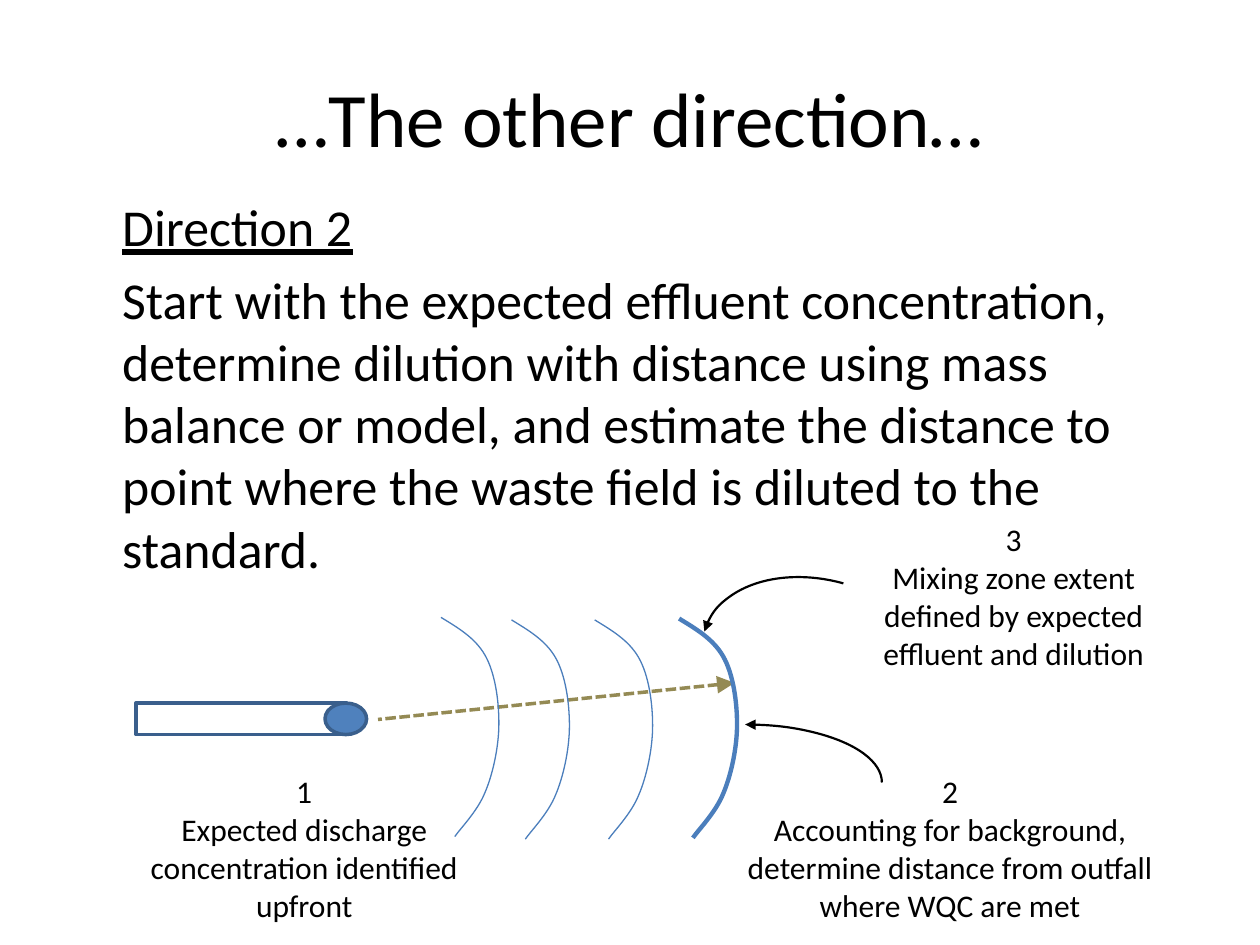
import pptx
import pptx.dml.color
import pptx.enum.dml
import pptx.enum.shapes
import pptx.enum.text
import pptx.oxml
import pptx.oxml.ns
import pptx.util

RGB = pptx.dml.color.RGBColor
SHAPE = pptx.enum.shapes.MSO_SHAPE
ALIGN = pptx.enum.text.PP_ALIGN
ANCHOR = pptx.enum.text.MSO_ANCHOR

BLACK = RGB(0x00, 0x00, 0x00)
BLUE = RGB(0x4F, 0x81, 0xBD)
NAVY = RGB(0x3A, 0x5F, 0x8C)
WAVE = RGB(0x4B, 0x7E, 0xBC)
OLIVE = RGB(0x94, 0x8A, 0x54)
FONT = "Calibri"
SCALE = 9144
BEND = (
    (13, 8), (27, 16), (35, 30),
    (43, 44), (46, 66), (46, 84),
    (46, 103), (41, 125), (35, 139),
    (29, 154), (15, 168), (11, 174),
)


def px(count):
    return pptx.util.Emu(count * SCALE)


def node(tag, **attrs):
    item = pptx.oxml.parse_xml(f'<a:{tag} {pptx.oxml.ns.nsdecls("a")}/>')
    for name, value in attrs.items():
        item.set(name, value)
    return item


class Painter:
    """Draws styled elements on the current slide, with lengths in px."""

    def __init__(self, deck):
        self.slide = deck.slides.add_slide(deck.slide_layouts[6])
        self.shapes = self.slide.shapes

    def text(self, box, lines, size, align=ALIGN.CENTER, anchor=ANCHOR.TOP, indent=0):
        frame = self.shapes.add_textbox(*map(px, box)).text_frame
        frame.word_wrap = True
        frame.vertical_anchor = anchor
        frame.margin_left = px(10 + indent)
        frame.text = "\n".join(lines)
        for par in frame.paragraphs:
            par.alignment = align
            par.font.name = FONT
            par.font.size = pptx.util.Pt(size)
            par.font.color.rgb = BLACK
        return frame

    def space(self, frame, share):
        for par in frame.paragraphs:
            gap = node("spcBef")
            gap.append(node("spcPct", val=str(share * 1000)))
            par._p.get_or_add_pPr().insert(0, gap)

    def stroke(self, line, color, width):
        line.color.rgb = color
        line.width = pptx.util.Pt(width)

    def point(self, line, size="med"):
        line._get_or_add_ln().append(node("headEnd", type="triangle", w=size, len=size))

    def shape(self, kind, box, color, width, fill=None):
        shape = self.shapes.add_shape(kind, *map(px, box))
        shape.shadow.inherit = False
        if fill is None:
            shape.fill.background()
        else:
            shape.fill.solid()
            shape.fill.fore_color.rgb = fill
        self.stroke(shape.line, color, width)
        return shape

    def arc(self, box, turn=0):
        arc = self.shape(SHAPE.ARC, box, BLACK, 1.25)
        arc.rotation = turn
        self.point(arc.line)

    def arrow(self, tip, base, color, width):
        kind = pptx.enum.shapes.MSO_CONNECTOR.STRAIGHT
        arrow = self.shapes.add_connector(kind, *map(px, tip + base))
        self.stroke(arrow.line, color, width)
        arrow.line.dash_style = pptx.enum.dml.MSO_LINE.SQUARE_DOT
        self.point(arrow.line, "lg")
        arrow._element.spPr.append(node("effectLst"))

    def wave(self, left, top, width):
        trace = self.shapes.build_freeform(px(left), px(top))
        trace.add_line_segments([(px(left + x), px(top + y)) for x, y in BEND], close=False)
        wave = trace.convert_to_shape()
        legs = list(wave._element.iter(pptx.oxml.ns.qn("a:lnTo")))
        for start in range(0, len(legs), 3):
            curve = node("cubicBezTo")
            legs[start].addprevious(curve)
            for leg in legs[start:start + 3]:
                curve.append(leg[0])
                leg.getparent().remove(leg)
        wave.shadow.inherit = False
        wave.fill.background()
        self.stroke(wave.line, WAVE, width)


def main():
    deck = pptx.Presentation()
    deck.slide_width, deck.slide_height = px(1000), px(750)
    pen = Painter(deck)

    pen.text((50, 30, 900, 125), ["…The other direction…"], 44, anchor=ANCHOR.MIDDLE)
    body = pen.text((50, 150, 900, 300), [
        "Direction 2",
        "Start with the expected effluent concentration, determine dilution with distance "
        "using mass balance or model, and estimate the distance to point where the waste "
        "field is diluted to the standard.",
    ], 29.6, ALIGN.LEFT, indent=37)
    pen.space(body, 20)
    body.paragraphs[0].font.underline = True

    pen.shape(SHAPE.RECTANGLE, (108, 558, 167, 25), NAVY, 2)
    pen.shape(SHAPE.OVAL, (258, 558, 33, 25), NAVY, 2, BLUE)

    for box, lines in (
        ((667, 408, 275, 131),
         ["3", "Mixing zone extent defined by expected effluent and dilution"]),
        ((558, 608, 392, 131),
         ["2", "Accounting for background, determine distance from outfall where WQC are met"]),
        ((75, 608, 333, 131),
         ["1", "Expected discharge concentration identified", "upfront"]),
    ):
        pen.text(box, lines, 18)

    pen.arc((483, 575, 217, 92))
    pen.arrow((583, 542), (300, 571), OLIVE, 2)
    pen.arc((585, 431, 133, 192), 285.6)

    for left, top, width in ((350, 490, 0.75), (406, 492, 0.75), (472, 492, 0.75), (539, 491, 2.5)):
        pen.wave(left, top, width)

    deck.save("out.pptx")


if __name__ == "__main__":
    main()
